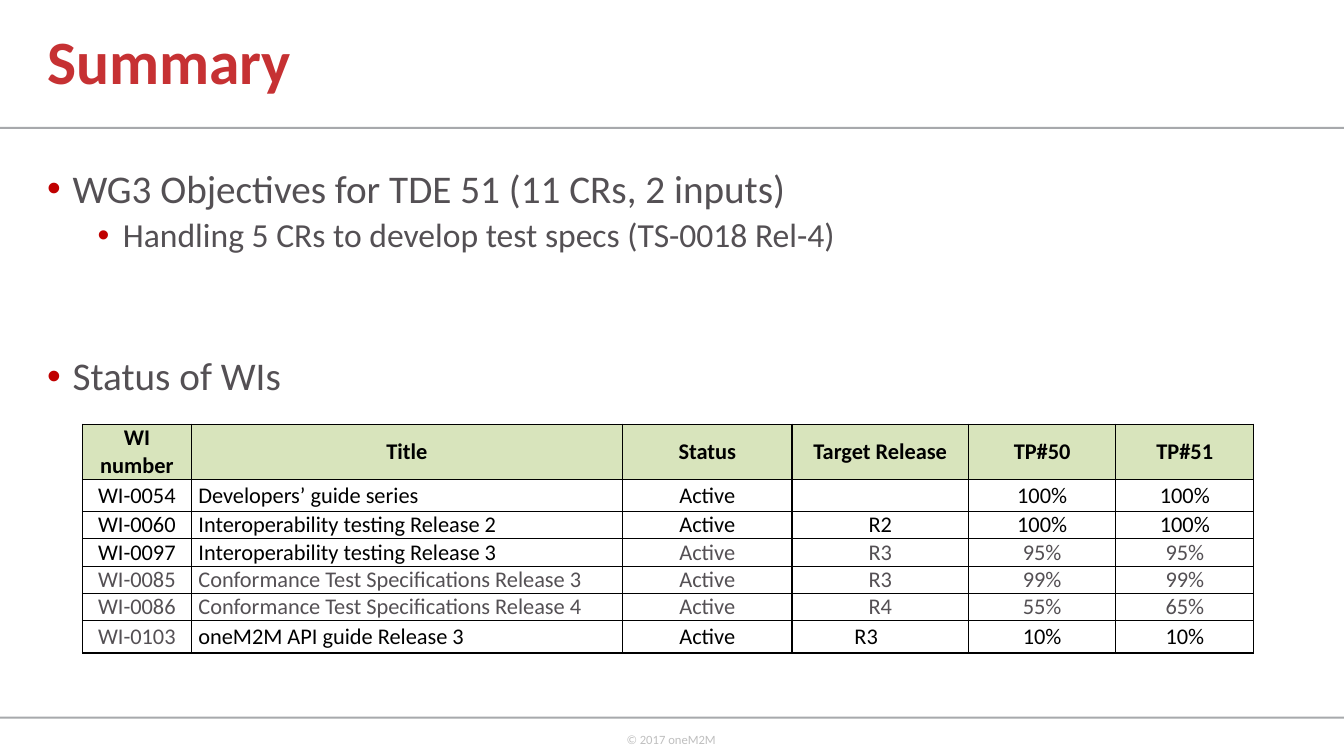
import pptx
import pptx.dml.color
import pptx.enum.shapes
import pptx.enum.text
import pptx.oxml
import pptx.oxml.ns
import pptx.util
from pptx.util import Cm

COLORS = {
    "rule": "A7A9AC",
    "footer": "BFBFBF",
    "title": "C63133",
    "bullet": "C00000",
    "gray": "545054",
    "black": "000000",
    "header": "D8E4BC",
    "white": "FFFFFF",
}
FONT = "Calibri"
COLUMN_WIDTHS = [2.74, 10.87, 4.27, 4.45, 3.71, 3.48]
ROW_HEIGHTS = [1.39, 0.81, 0.69, 0.69, 0.69, 0.69, 0.81]
HEADINGS = ["WI number", "Title", "Status", "Target Release", "TP#50", "TP#51"]
WORK_ITEMS = [
    ["WI-0054", "Developers’ guide series", "Active", "", "100%", "100%"],
    ["WI-0060", "Interoperability testing Release 2", "Active", "R2", "100%", "100%"],
    ["WI-0097", "Interoperability testing Release 3", "Active", "R3", "95%", "95%"],
    ["WI-0085", "Conformance Test Specifications Release 3", "Active", "R3", "99%", "99%"],
    ["WI-0086", "Conformance Test Specifications Release 4", "Active", "R4", "55%", "65%"],
    ["WI-0103", "oneM2M API guide Release 3", "Active", "R3", "10%", "10%"],
]
GRAY_COLUMNS = {
    "WI-0097": range(2, 6),
    "WI-0085": range(6),
    "WI-0086": range(6),
    "WI-0103": range(1),
}
OBJECTIVES = [
    ("WG3 Objectives for TDE 51 (11 CRs, 2 inputs)", 0, 28, 0),
    ("Handling 5 CRs to develop test specs (TS-0018 Rel-4)", 1, 24, 5),
    ("Status of WIs", 0, 28, 73),
]


def rgb(name):
    return pptx.dml.color.RGBColor.from_string(COLORS[name])


def xml_element(tag, content="", attributes=""):
    namespace = pptx.oxml.ns.nsdecls("a")
    return pptx.oxml.parse_xml(f"<a:{tag} {namespace} {attributes}>{content}</a:{tag}>")


def style_font(para, size, color, bold=False):
    para.font.name = FONT
    para.font.size = pptx.util.Pt(size)
    para.font.bold = bold
    para.font.color.rgb = rgb(color)


def add_rule(page, top):
    rule = page.shapes.add_shape(
        pptx.enum.shapes.MSO_SHAPE.RECTANGLE, 0, Cm(top), Cm(33.87), Cm(0.05))
    rule.shadow.inherit = False
    rule.fill.solid()
    rule.fill.fore_color.rgb = rgb("rule")
    rule.line.fill.background()


def add_text(page, left, top, width, height, text, size, color, bold=False, wrap=True):
    box = page.shapes.add_textbox(Cm(left), Cm(top), Cm(width), Cm(height))
    frame = box.text_frame
    frame.word_wrap = wrap
    para = frame.paragraphs[0]
    para.text = text
    style_font(para, size, color, bold)
    return frame


def add_bullets(page):
    box = page.shapes.add_textbox(Cm(0.94), Cm(4.14), Cm(29.21), Cm(12.09))
    frame = box.text_frame
    frame.word_wrap = True
    for index, (text, level, size, space) in enumerate(OBJECTIVES):
        para = frame.add_paragraph() if index else frame.paragraphs[0]
        para.text = text
        para.level = level
        para.line_spacing = 0.9
        para.space_before = pptx.util.Pt(space)
        properties = para._p.get_or_add_pPr()
        properties.set("marL", str(Cm(0.64 + 1.27 * level)))
        properties.set("indent", str(Cm(-0.64)))
        properties.append(xml_element("buClr", f'<a:srgbClr val="{COLORS["bullet"]}"/>'))
        properties.append(xml_element("buFont", attributes='typeface="Arial"'))
        properties.append(xml_element("buChar", attributes='char="•"'))
        style_font(para, size, "gray")


def add_borders(cell):
    properties = cell._tc.get_or_add_tcPr()
    line = f'<a:solidFill><a:srgbClr val="{COLORS["black"]}"/></a:solidFill>'
    for side in ("lnL", "lnR", "lnT", "lnB"):
        properties.append(xml_element(side, line, f'w="{pptx.util.Pt(1)}"'))


def fill_cell(cell, text, fill, color, centered, bold):
    add_borders(cell)
    cell.fill.solid()
    cell.fill.fore_color.rgb = rgb(fill)
    cell.vertical_anchor = pptx.enum.text.MSO_ANCHOR.MIDDLE
    cell.margin_left = cell.margin_right = Cm(0.18)
    cell.margin_top = cell.margin_bottom = 0
    para = cell.text_frame.paragraphs[0]
    para.text = text
    align = pptx.enum.text.PP_ALIGN
    para.alignment = align.CENTER if centered else align.LEFT
    style_font(para, 16, color, bold)


def add_status_table(page):
    rows = [HEADINGS] + WORK_ITEMS
    table = page.shapes.add_table(
        len(rows), len(HEADINGS), Cm(2.08), Cm(10.69),
        Cm(sum(COLUMN_WIDTHS)), Cm(sum(ROW_HEIGHTS))).table
    for column, width in zip(table.columns, COLUMN_WIDTHS):
        column.width = Cm(width)
    for row, height in zip(table.rows, ROW_HEIGHTS):
        row.height = Cm(height)
    for r, values in enumerate(rows):
        heading = r == 0
        gray = GRAY_COLUMNS.get(values[0], ())
        for c, text in enumerate(values):
            fill_cell(
                table.cell(r, c), text,
                fill="header" if heading else "white",
                color="gray" if c in gray else "black",
                centered=heading or c != 1, bold=heading)
    table.cell(len(rows) - 1, 3).margin_right = Cm(0.89)


def main():
    deck = pptx.Presentation()
    deck.slide_width = Cm(33.87)
    deck.slide_height = Cm(19.05)
    page = deck.slides.add_slide(deck.slide_layouts[6])
    for top in (3.2, 18.06):
        add_rule(page, top)
    add_text(page, 15.54, 18.31, 2.79, 1.02, "© 2017 oneM2M", 9, "footer", wrap=False)
    title = add_text(page, 0.94, 0, 21.82, 3.25, "Summary", 44, "title", bold=True)
    title.vertical_anchor = pptx.enum.text.MSO_ANCHOR.MIDDLE
    title.paragraphs[0].line_spacing = 0.9
    add_bullets(page)
    add_status_table(page)
    deck.save("out.pptx")


if __name__ == "__main__":
    main()
